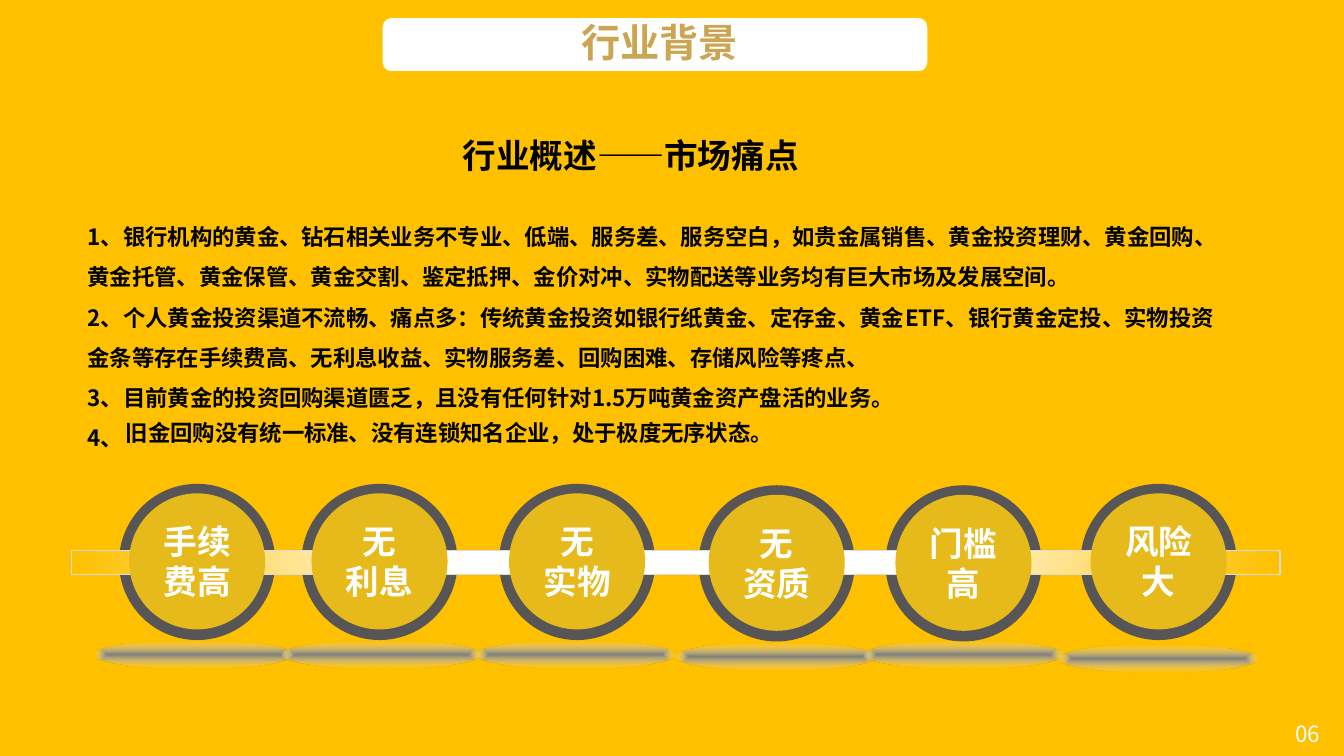
import pptx
import pptx.util
import pptx.dml.color
import pptx.enum.dml
import pptx.enum.lang
import pptx.enum.shapes
import pptx.enum.text
import pptx.oxml
import pptx.oxml.ns

Pt = pptx.util.Pt
RGB = pptx.dml.color.RGBColor
KIND = pptx.enum.shapes.MSO_SHAPE
ALIGN = pptx.enum.text.PP_ALIGN
ANCHOR = pptx.enum.text.MSO_ANCHOR
SIZE = pptx.enum.text.MSO_AUTO_SIZE
LANG = pptx.enum.lang.MSO_LANGUAGE_ID

AMBER = RGB(0xFF, 0xC0, 0x00)
WHITE = RGB(0xFF, 0xFF, 0xFF)
BLACK = RGB(0x00, 0x00, 0x00)
SLATE = RGB(0x57, 0x55, 0x56)
GOLD = RGB(0xE6, 0xBA, 0x1A)
BRONZE = RGB(0xCA, 0xA6, 0x52)
TRIM = RGB(0xFF, 0xC6, 0x00)
SILVER = RGB(0xDC, 0xDC, 0xDC)
GREY = RGB(0x80, 0x80, 0x80)
CREAM = RGB(0xEE, 0xEC, 0xE1)
FONT = "Noto Sans CJK SC"

deck = pptx.Presentation()
deck.slide_width = Pt(960)
deck.slide_height = Pt(540)
slide = deck.slides.add_slide(deck.slide_layouts[6])
slide.background.fill.solid()
slide.background.fill.fore_color.rgb = AMBER


def draw(kind, box, fill, edge=None):
    shape = slide.shapes.add_shape(kind, *map(Pt, box))
    shape.shadow.inherit = False
    if isinstance(fill, dict):
        stops = "".join(
            f'<a:gs pos="{pos * 1000}"><a:srgbClr val="{tone}">'
            f'<a:alpha val="{alpha * 1000}"/></a:srgbClr></a:gs>'
            for pos, tone, alpha in fill["stops"])
        left, top, right, bottom = [side * 1000 for side in fill["rect"]]
        shape.fill.background()
        blank = shape._element.spPr.find(pptx.oxml.ns.qn("a:noFill"))
        blank.getparent().replace(blank, pptx.oxml.parse_xml(
            f'<a:gradFill {pptx.oxml.ns.nsdecls("a")} rotWithShape="1">'
            f'<a:gsLst>{stops}</a:gsLst><a:path path="{fill["form"]}">'
            f'<a:fillToRect l="{left}" t="{top}" r="{right}" b="{bottom}"/>'
            '</a:path></a:gradFill>'))
    else:
        shape.fill.solid()
        shape.fill.fore_color.rgb = fill
    if edge is None:
        shape.line.fill.background()
    else:
        shape.line.color.rgb = edge
        shape.line.width = Pt(1)
    return shape


def write(frame, lines, size, tone, bold, space, align):
    for num, line in enumerate(lines):
        para = frame.add_paragraph() if num else frame.paragraphs[0]
        para.alignment = align
        para.line_spacing = space
        run = para.add_run()
        run.text = line
        run.font.size = Pt(size)
        run.font.bold = bold
        run.font.name = FONT
        run.font.language_id = LANG.SIMPLIFIED_CHINESE
        run.font.color.rgb = tone
        east = pptx.oxml.parse_xml(
            f'<a:ea {pptx.oxml.ns.nsdecls("a")} typeface="{FONT}"/>')
        run.font._element.find(pptx.oxml.ns.qn("a:latin")).addnext(east)


draw(KIND.ROUNDED_RECTANGLE, (272.9, 12.4, 390, 39), WHITE, TRIM)

pains = [
    (85, 345.6, 67, 457.9, ["手续费高"]),
    (215.3, 345.6, 200.9, 457.9, ["无", "利息"]),
    (356.4, 345.6, 339.8, 457.9, ["无", "实物"]),
    (499, 346.6, 482.4, 459.4, ["无", "资质"]),
    (632.4, 346.6, 617, 457.9, ["门槛高"]),
    (771.8, 345.6, 756, 460.8, ["风险大"]),
]
for left, top, *rest in pains:
    draw(KIND.OVAL, (left, top, 111.6, 111.6), SLATE)

band = {"form": "circle", "rect": (50, -80, 50, 180),
        "stops": [(0, WHITE, 100), (35, WHITE, 100), (100, AMBER, 100)]}
draw(KIND.RECTANGLE, (51, 393.1, 863.3, 17.3), band, SILVER)

shade = {"form": "shape", "rect": (50, 50, 50, 50),
         "stops": [(0, GREY, 100), (100, CREAM, 0)]}
for left, top, side, base, words in pains:
    disc = draw(KIND.OVAL, (left + 7.2, top + 6.8, 97.2, 97.2), GOLD)
    frame = disc.text_frame
    frame.margin_left = frame.margin_right = 0
    frame.margin_top = frame.margin_bottom = 0
    frame.word_wrap = True
    frame.vertical_anchor = ANCHOR.MIDDLE
    write(frame, words, 24, WHITE, True, 1.0, ALIGN.CENTER)
    draw(KIND.OVAL, (side, base, 142.6, 19.4), shade)

points = [
    "1、银行机构的黄金、钻石相关业务不专业、低端、服务差、服务空白，如贵金属销售、黄金投资理财、黄金回购、黄金托管、黄金保管、黄金交割、鉴定抵押、金价对冲、实物配送等业务均有巨大市场及发展空间。",
    "2、个人黄金投资渠道不流畅、痛点多：传统黄金投资如银行纸黄金、定存金、黄金ETF、银行黄金定投、实物投资金条等存在手续费高、无利息收益、实物服务差、回购困难、存储风险等疼点、",
    "3、目前黄金的投资回购渠道匮乏，且没有任何针对1.5万吨黄金资产盘活的业务。",
    "4、",
]
last = "旧金回购没有统一标准、没有连锁知名企业，处于极度无序状态。"
inset = (7.2, 3.6, 7.2, 3.6)
tight = (0, 0, 7.2, 0)
texts = [
    ((918, 514.1, 36.7, 22.3), inset, True, SIZE.NONE, ANCHOR.MIDDLE,
     ["06"], 16, WHITE, False, 0.9),
    ((62.6, 149, 819.4, 174.2), tight, True, SIZE.SHAPE_TO_FIT_TEXT,
     ANCHOR.MIDDLE, points, 16, BLACK, True, 1.5),
    ((330.5, 99.4, 253.4, 25.9), tight, False, SIZE.SHAPE_TO_FIT_TEXT,
     ANCHOR.TOP, ["行业概述——市场痛点"], 24, BLACK, True, 0.9),
    ((408.2, 13.7, 127.4, 38.2), inset, False, SIZE.SHAPE_TO_FIT_TEXT,
     ANCHOR.TOP, ["行业背景"], 28, BRONZE, True, 0.9),
    ((82.8, 286.6, 501.1, 36), inset, True, SIZE.SHAPE_TO_FIT_TEXT,
     ANCHOR.TOP, [last], 16, BLACK, True, 1.5),
]
for box, gaps, wrap, fit, anchor, lines, size, tone, bold, space in texts:
    frame = slide.shapes.add_textbox(*map(Pt, box)).text_frame
    frame.margin_left, frame.margin_top = Pt(gaps[0]), Pt(gaps[1])
    frame.margin_right, frame.margin_bottom = Pt(gaps[2]), Pt(gaps[3])
    frame.word_wrap = wrap
    frame.auto_size = fit
    frame.vertical_anchor = anchor
    write(frame, lines, size, tone, bold, space, ALIGN.LEFT)

deck.save("out.pptx")
